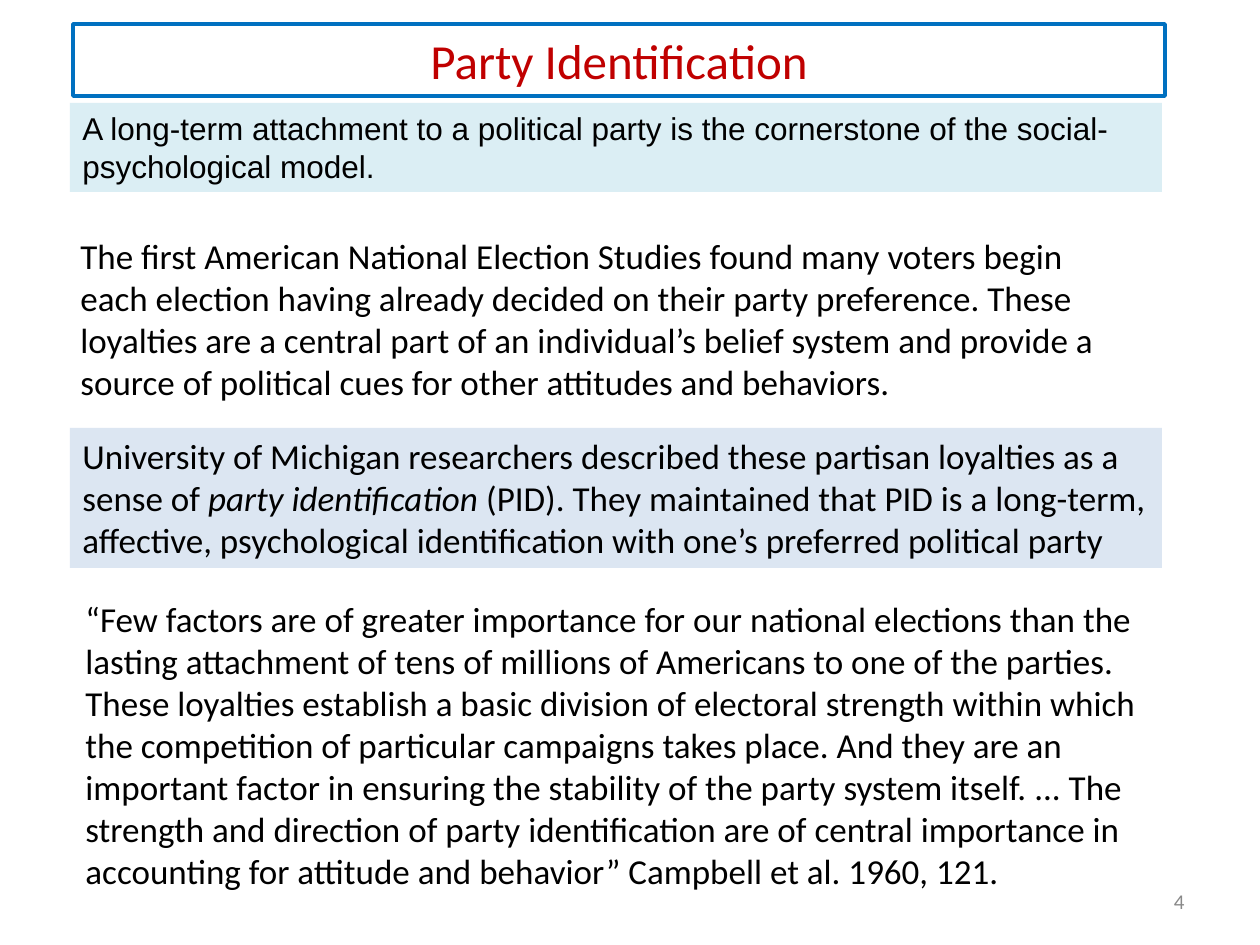
from dataclasses import dataclass
from typing import Optional

from pptx import Presentation
from pptx.dml.color import RGBColor
from pptx.enum.shapes import MSO_SHAPE as SHAPE
from pptx.enum.text import MSO_ANCHOR as ANCHOR, MSO_AUTO_SIZE as AUTO, PP_ALIGN as ALIGN
from pptx.util import Emu, Pt

PX_PER_INCH = 126
COLORS = {
    "border": "0070C0",
    "title": "C00000",
    "text": "000000",
    "lead": "DBEEF4",
    "definition": "DCE6F2",
    "number": "898989",
}


@dataclass
class Block:
    x: int
    y: int
    w: int
    h: int
    runs: tuple[str, ...]
    fill: Optional[str] = None
    size: int = 20
    font: str = "Calibri"
    color: str = "text"
    align: ALIGN = ALIGN.LEFT
    anchor: ANCHOR = ANCHOR.TOP
    italic_run: Optional[int] = None


TITLE = Block(73, 24, 1092, 72, ("Party Identification",),
              size=28, color="title", align=ALIGN.CENTER)

BLOCKS = [
    Block(73, 591, 1092, 310, (
        "“Few factors are of greater importance for our national elections than the "
        "lasting attachment of tens of millions of Americans to one of the parties. "
        "These loyalties establish a basic division of electoral strength within which "
        "the competition of particular campaigns takes place. And they are an "
        "important factor in ensuring the stability of the party system itself. ... The "
        "strength and direction of party identification are of central importance in "
        "accounting for attitude and behavior” Campbell et al. 1960, 121.",)),
    Block(68, 228, 1080, 183, (
        "The first American National Election Studies found many voters begin "
        "each election having already decided on their party preference. These "
        "loyalties are a central part of an individual’s belief system and provide a "
        "source of political cues for other attitudes and behaviors.",)),
    Block(70, 428, 1092, 140, (
        "University of Michigan researchers described these partisan loyalties as a sense of ",
        "party identification ",
        "(PID). They maintained that PID is a long-term, affective, psychological "
        "identification with one’s preferred political party"),
        fill="definition", italic_run=1),
    Block(70, 103, 1092, 89, (
        "A long-term attachment to a political party is the cornerstone of the "
        "social- psychological model.",), fill="lead", size=18, font="Arial"),
    Block(903, 876, 294, 50, ("4",), size=12, color="number",
          align=ALIGN.RIGHT, anchor=ANCHOR.MIDDLE),
]


def px(n: int) -> Emu:
    return Emu(round(n * 914400 / PX_PER_INCH))


def rgb(name: str) -> RGBColor:
    return RGBColor.from_string(COLORS[name])


def write_text(sp, b: Block) -> None:
    tf = sp.text_frame
    tf.word_wrap = True
    tf.auto_size = AUTO.NONE
    tf.vertical_anchor = b.anchor
    p = tf.paragraphs[0]
    p.alignment = b.align
    p.font.size = Pt(b.size)
    p.font.name = b.font
    p.font.color.rgb = rgb(b.color)
    for i, text in enumerate(b.runs):
        r = p.add_run()
        r.text = text
        if i == b.italic_run:
            r.font.italic = True


def add_title(s, b: Block) -> None:
    sp = s.shapes.title
    sp.left, sp.top, sp.width, sp.height = map(px, (b.x, b.y, b.w, b.h))
    sp.line.color.rgb = rgb("border")
    sp.line.width = Pt(2.25)
    write_text(sp, b)


def add_block(s, b: Block) -> None:
    box = tuple(map(px, (b.x, b.y, b.w, b.h)))
    if b.fill:
        sp = s.shapes.add_shape(SHAPE.RECTANGLE, *box)
        sp.shadow.inherit = False
        sp.fill.solid()
        sp.fill.fore_color.rgb = rgb(b.fill)
        sp.line.fill.background()
    else:
        sp = s.shapes.add_textbox(*box)
    write_text(sp, b)


def main() -> None:
    prs = Presentation()
    prs.slide_width, prs.slide_height = px(1260), px(945)
    s = prs.slides.add_slide(prs.slide_layouts[5])
    add_title(s, TITLE)
    for b in BLOCKS:
        add_block(s, b)
    prs.save("out.pptx")


if __name__ == "__main__":
    main()
